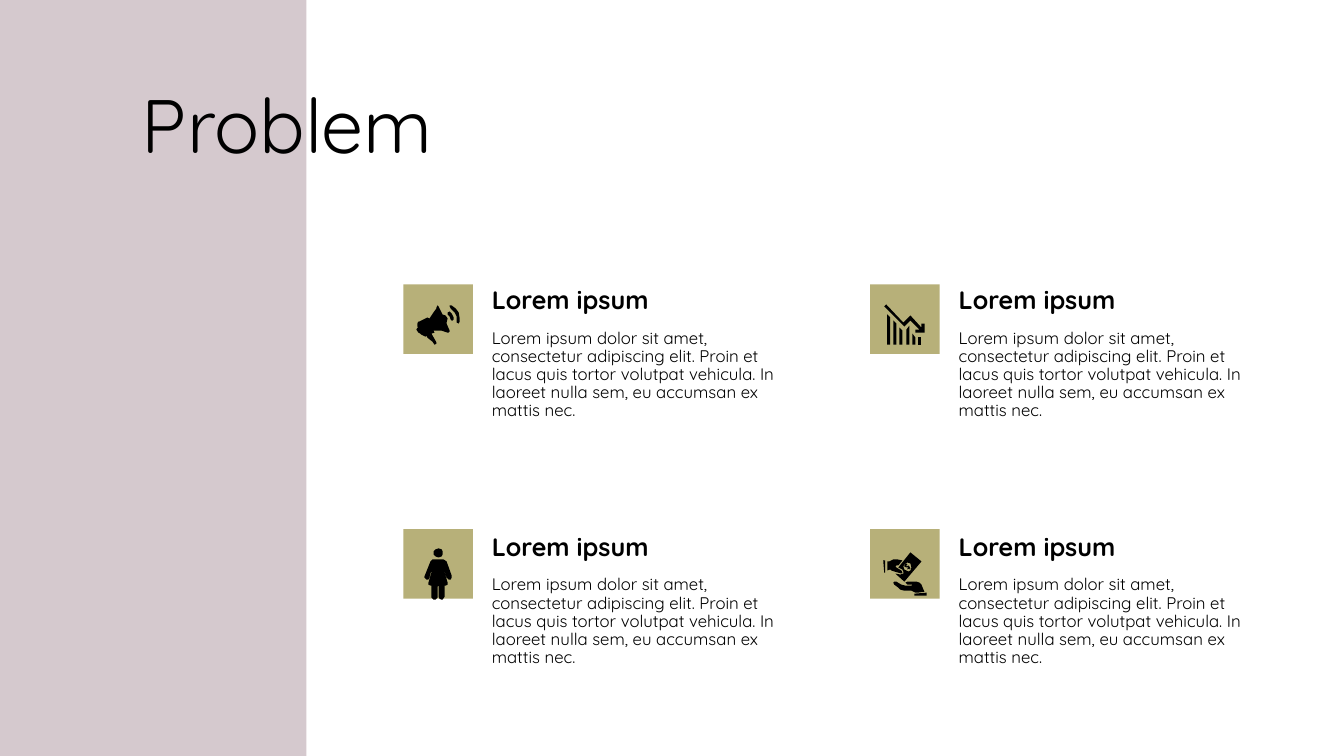
from dataclasses import dataclass

from pptx import Presentation
from pptx.dml.color import RGBColor
from pptx.enum.shapes import MSO_SHAPE as Preset
from pptx.enum.text import MSO_ANCHOR as Anchor
from pptx.util import Pt

PX = 9144  # EMU in one px, 100 px to the inch


@dataclass(frozen=True)
class Theme:
    font: str = "Quicksand"
    ink: str = "000000"
    band: str = "D5C9CE"
    tile: str = "B7B079"
    title_size: int = 54
    heading_size: int = 18
    body_size: int = 12


THEME = Theme()
HEADING = "Lorem ipsum"
BODY = ("Lorem ipsum dolor sit amet, consectetur adipiscing elit. Proin et lacus quis "
        "tortor volutpat vehicula. In laoreet nulla sem, eu accumsan ex mattis nec.")

# Icons: each shape is a list of outlines, in px from the corner of its tile
MEGAPHONE = [
    [[(17, 49), (15, 48), (13, 45), (14, 43), (15, 43), (14, 42), (14, 39), (15, 37),
      (16, 37), (22, 34), (24, 33), (26, 34), (30, 28), (33, 24), (33, 23), (34, 21),
      (35, 22), (36, 24), (39, 30), (42, 31), (44, 34), (43, 38), (43, 39), (46, 46),
      (46, 47), (45, 48), (44, 48), (38, 46), (34, 46), (30, 46), (31, 48), (28, 49),
      (32, 56), (33, 58), (33, 59), (31, 60), (29, 57), (24, 53), (23, 51), (22, 52),
      (18, 50)]],
    [[(56, 34), (56, 37), (55, 39), (53, 38), (53, 37), (53, 32), (51, 28), (47, 24),
      (46, 22), (46, 21), (48, 21), (52, 24), (55, 28)]],
    [[(50, 34), (50, 35), (49, 36), (48, 36), (47, 35), (46, 32), (44, 30), (44, 28),
      (46, 27), (48, 29), (50, 33)]],
]
FALLING_ARROW = [[(54, 48), (45, 48), (45, 45), (49, 45), (40, 36), (34, 42), (14, 22),
                  (16, 20), (33, 38), (40, 31), (51, 43), (51, 39), (54, 39)]]
BAR_TOPS = [(17, 30, 33), (23, 36, 39), (29, 43, 46), (36, 45, 41), (42, 49, 53),
            (48, 52, 52)]  # left, height at left, height at right
FALLING_CHART = [FALLING_ARROW] + [
    [[(left, 60), (left, start), (left + 3, end), (left + 3, 60)]]
    for left, start, end in BAR_TOPS]
WOMAN = [
    [[(30, 70), (28, 68), (28, 56), (27, 56), (25, 55), (25, 53), (28, 43), (28, 41),
      (27, 44), (26, 48), (25, 50), (23, 50), (21, 48), (21, 47), (27, 32), (29, 30),
      (40, 30), (43, 32), (48, 46), (48, 48), (47, 50), (45, 50), (43, 48), (41, 42),
      (41, 43), (44, 53), (44, 55), (42, 56), (41, 56), (41, 67), (39, 70), (38, 70),
      (36, 69), (35, 67), (35, 56), (34, 57), (34, 68), (32, 70)]],
    [[(35, 19), (38, 20), (39, 22), (39, 25), (38, 27), (35, 28), (32, 27), (30, 25),
      (30, 22), (32, 20)]],
]
PAYMENT = [
    # Banknote with a round opening, and the sign in it
    [[(25, 44), (30, 45), (33, 44), (33, 42), (32, 40), (28, 38), (40, 23), (51, 32),
      (34, 52)],
     [(37, 33), (34, 35), (33, 37), (34, 40), (38, 42), (40, 41), (41, 38), (40, 34)]],
    [[(40, 39), (39, 40), (39, 39), (37, 40), (37, 39), (38, 38), (36, 38), (34, 37),
      (34, 35), (36, 34), (37, 35), (36, 36), (36, 37), (38, 36), (39, 37)]],
    # Open palm
    [[(54, 62), (47, 63), (45, 63), (41, 61), (34, 61), (30, 60), (28, 58), (24, 55),
      (23, 53), (24, 52), (26, 52), (31, 55), (35, 56), (41, 56), (42, 55), (37, 55),
      (35, 53), (37, 52), (46, 52), (49, 53), (51, 55), (53, 60)]],
    # Giving hand
    [[(17, 32), (19, 32), (23, 30), (27, 30), (32, 31), (28, 36), (26, 36), (25, 37),
      (26, 38), (31, 41), (32, 43), (31, 44), (24, 42), (21, 41), (20, 40), (17, 41)]],
    # Cuffs
    [[(44, 66), (44, 64), (56, 63), (56, 66)]],
    [[(13, 31), (15, 31), (15, 43), (14, 43)]],
]


def px(*lengths):
    return [length * PX for length in lengths]


def paint(shape, color):
    shape.shadow.inherit = False
    shape.fill.solid()
    shape.fill.fore_color.rgb = RGBColor.from_string(color)
    shape.line.fill.background()


def add_rectangle(slide, box, color):
    paint(slide.shapes.add_shape(Preset.RECTANGLE, *px(*box)), color)


def add_text(slide, box, text, *, size, bold=False, anchor=Anchor.TOP):
    frame = slide.shapes.add_textbox(*px(*box)).text_frame
    frame.word_wrap = True
    frame.vertical_anchor = anchor
    paragraph = frame.paragraphs[0]
    paragraph.text = text
    paragraph.line_spacing = 0.9
    font = paragraph.runs[0].font
    font.name, font.size, font.bold = THEME.font, Pt(size), bold
    font.color.rgb = RGBColor.from_string(THEME.ink)


def add_icon(slide, left, top, outlines_by_shape):
    parts = []
    for first, *others in outlines_by_shape:
        builder = slide.shapes.build_freeform(*first[0], scale=PX)
        builder.add_line_segments(first[1:], close=True)
        for outline in others:
            builder.move_to(*outline[0])
            builder.add_line_segments(outline[1:], close=True)
        part = builder.convert_to_shape(*px(left, top))
        paint(part, THEME.ink)
        parts.append(part)
    slide.shapes.add_group_shape(parts)


def add_problem(slide, left, tile_top, text_top, icon):
    """Tile with its icon, and heading and body to the right."""
    add_rectangle(slide, (left, tile_top, 69, 69), THEME.tile)
    add_icon(slide, left, tile_top, icon)
    text_left = left + 78
    add_text(slide, (text_left, text_top, 313, 51), HEADING,
             size=THEME.heading_size, bold=True, anchor=Anchor.BOTTOM)
    add_text(slide, (text_left, text_top + 56, 313, 117), BODY, size=THEME.body_size)


def add_problem_grid(slide, left, top):
    icons = [MEGAPHONE, FALLING_CHART, WOMAN, PAYMENT]
    for index, icon in enumerate(icons):
        row, column = divmod(index, 2)
        add_problem(slide, left + column * 463, top + 16 + row * 243,
                    top + row * 245, icon)


def add_problem_slide(presentation):
    slide = presentation.slides.add_slide(presentation.slide_layouts[6])
    # Side band and title
    add_rectangle(slide, (0, 0, 304, 750), THEME.band)
    add_text(slide, (131, 83, 1122, 128), "Problem", size=THEME.title_size)
    # Four problems
    add_problem_grid(slide, 400, 266)


def main():
    presentation = Presentation()
    presentation.slide_width, presentation.slide_height = px(1333, 750)
    add_problem_slide(presentation)
    presentation.save("out.pptx")


if __name__ == "__main__":
    main()
